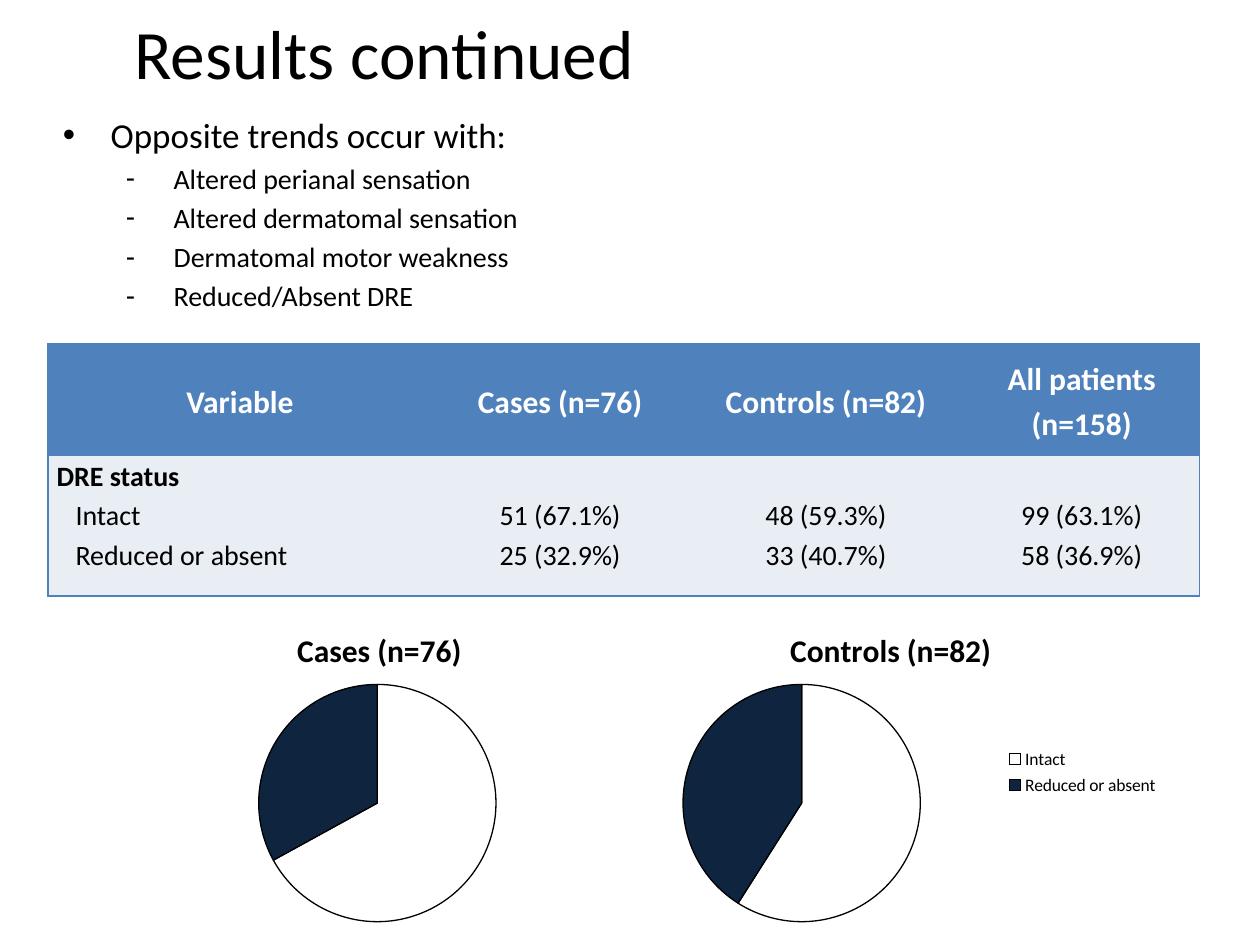
import dataclasses
import pptx
import pptx.util
import pptx.chart.data
import pptx.dml.color
import pptx.enum.chart
import pptx.enum.text
import pptx.oxml
import pptx.oxml.ns

Inches = pptx.util.Inches
Pt = pptx.util.Pt
Align = pptx.enum.text.PP_ALIGN
Anchor = pptx.enum.text.MSO_ANCHOR


@dataclasses.dataclass(frozen=True)
class Theme:
    """Colours, font and type sizes of the slide."""
    font: str = "Calibri"
    ink: str = "000000"
    white: str = "FFFFFF"
    blue: str = "4F81BD"
    pale: str = "E9EDF4"
    navy: str = "0F243E"
    title: float = 39.6
    lead: float = 20
    head: float = 18
    body: float = 16
    small: float = 10


THEME = Theme()


def rgb(code):
    """Turn a hex code into a colour."""
    return pptx.dml.color.RGBColor.from_string(code)


def node(tag, **attrs):
    """Make an XML element with the given attributes."""
    item = pptx.oxml.parse_xml(f"<{tag} {pptx.oxml.ns.nsdecls(tag.split(':')[0])}/>")
    for key, value in attrs.items():
        item.set(key, str(value))
    return item


def style(font, size, color=THEME.ink, bold=False):
    """Set the look of a font."""
    font.name, font.size, font.bold = THEME.font, Pt(size), bold
    font.color.rgb = rgb(color)


def write(para, text, size, color=THEME.ink, bold=False):
    """Add one styled run to a paragraph."""
    run = para.add_run()
    run.text = text
    style(run.font, size, color, bold)


def lines(frame, count):
    """Yield the first paragraph of a frame, then new ones."""
    yield frame.paragraphs[0]
    for _ in range(count - 1):
        yield frame.add_paragraph()


def add_title(slide, box, text):
    """Place the slide title in the box."""
    frame = slide.shapes.add_textbox(*box).text_frame
    frame.word_wrap = True
    frame.vertical_anchor = Anchor.MIDDLE
    frame.paragraphs[0].alignment = Align.CENTER
    write(frame.paragraphs[0], text, THEME.title)


def add_list(slide, box, lead, items):
    """Place a lead bullet with dashed items below it."""
    frame = slide.shapes.add_textbox(*box).text_frame
    frame.word_wrap = True
    texts = [lead, *items]
    for index, para in enumerate(lines(frame, len(texts))):
        first = index == 0
        size = THEME.lead if first else THEME.body
        para.level = 0 if first else 1
        para.space_before = Pt(size * 0.2)
        if first:
            para.line_spacing = 2.0
        props = para._p.get_or_add_pPr()
        props.set("marL", str(Inches(0.38 if first else 0.88)))
        props.set("indent", str(Inches(-0.38)))
        props.append(node("a:buFont", typeface="Arial"))
        props.append(node("a:buChar", char="•" if first else "-"))
        write(para, texts[index], size)


def edge(cell, sides):
    """Draw blue borders on the named sides of a cell."""
    props = cell._tc.get_or_add_tcPr()
    for spot, side in enumerate(sides):
        line = node(f"a:ln{side}", w=Pt(1))
        fill = node("a:solidFill")
        fill.append(node("a:srgbClr", val=THEME.blue))
        line.append(fill)
        props.insert(spot, line)


def add_table(slide, box, widths, heights, heads, groups):
    """Place the table with a header row and one row of grouped values."""
    table = slide.shapes.add_table(2, len(widths), *box).table
    table.horz_banding = table.first_row = False
    table._tbl.tblPr[0].text = "{2D5ABB26-0587-4C30-8999-92F81FD0307C}"
    for row, height in zip(table.rows, heights):
        row.height = Inches(height)
    last = len(widths) - 1
    for col, width in enumerate(widths):
        table.columns[col].width = Inches(width)
        for row, texts in enumerate(([heads[col]], groups[col])):
            cell = table.cell(row, col)
            head, label = row == 0, row == 1 and col == 0
            cell.margin_left = cell.margin_right = Inches(0.07)
            cell.margin_top = Inches(0 if head or label else 0.31)
            cell.margin_bottom = 0
            cell.vertical_anchor = Anchor.MIDDLE if head else Anchor.TOP
            cell.fill.solid()
            cell.fill.fore_color.rgb = rgb(THEME.blue if head else THEME.pale)
            edge(cell, "L" * (col == 0) + "R" * (col == last) + "TB")
            for index, para in enumerate(lines(cell.text_frame, len(texts))):
                para.line_spacing = 1.15
                para.alignment = Align.LEFT if label else Align.CENTER
                if label and index:
                    para._p.get_or_add_pPr().set("marL", str(Inches(0.15)))
                write(para, texts[index], THEME.head if head else THEME.body,
                      THEME.white if head else THEME.ink,
                      head or (label and index == 0))


def settle(part, inner=False, **spots):
    """Give a chart part a fixed place, in fractions of the chart."""
    layout, manual = node("c:layout"), node("c:manualLayout")
    layout.append(manual)
    if inner:
        manual.append(node("c:layoutTarget", val="inner"))
    for key in "xy":
        manual.append(node(f"c:{key}Mode", val="edge"))
    for key, value in spots.items():
        manual.append(node(f"c:{key}", val=value))
    for old in part.findall(pptx.oxml.ns.qn("c:layout")):
        part.remove(old)
    tags = [pptx.oxml.ns.qn(tag) for tag in ("c:tx", "c:legendPos")]
    part.insert(sum(child.tag in tags for child in part), layout)


def add_pie(slide, box, name, cats, vals, left, start, legend=False):
    """Place a titled pie chart, with a legend on request."""
    data = pptx.chart.data.CategoryChartData()
    data.categories = cats
    data.add_series(name, vals)
    chart = slide.shapes.add_chart(
        pptx.enum.chart.XL_CHART_TYPE.PIE, *box, data).chart
    style(chart.font, THEME.small)
    chart.has_title = True
    write(chart.chart_title.text_frame.paragraphs[0], name, THEME.head, bold=True)
    settle(chart.chart_title._element, x=start, y=0.07)
    plot = chart.plots[0]
    plot.vary_by_categories = True
    for index, color in enumerate((THEME.white, THEME.navy)):
        form = plot.series[0].points[index].format
        form.fill.solid()
        form.fill.fore_color.rgb = rgb(color)
        form.line.color.rgb = rgb(THEME.ink)
        form.line.width = Pt(0.75)
    settle(chart._chartSpace.chart.plotArea, True, x=left, y=0.25, w=0.42, h=0.69)
    chart.has_legend = legend
    if legend:
        chart.legend.position = pptx.enum.chart.XL_LEGEND_POSITION.RIGHT
        chart.legend.include_in_layout = False
        settle(chart.legend._element, x=0.69, y=0.42, w=0.3, h=0.17)


def main():
    """Build the results slide and save it."""
    deck = pptx.Presentation()
    deck.slide_width, deck.slide_height = Inches(10), Inches(7.5)
    slide = deck.slides.add_slide(deck.slide_layouts[6])
    box = lambda *sizes: [Inches(size) for size in sizes]
    cases, controls = "Cases (n=76)", "Controls (n=82)"
    cats = ["Intact", "Reduced or absent"]
    add_table(slide, box(0.38, 2.73, 9.15, 2), (3.05, 2.03, 2.19, 1.87), (0.88, 1.12),
              ("Variable", cases, controls, "All patients (n=158)"),
              (["DRE status", *cats], ["51 (67.1%)", "25 (32.9%)"],
               ["48 (59.3%)", "33 (40.7%)"], ["99 (63.1%)", "58 (36.9%)"]))
    add_title(slide, box(-0.95, 0.01, 8, 0.8), "Results continued")
    add_list(slide, box(0.4, 0.52, 9.46, 3.19), "Opposite trends occur with:",
             ("Altered perianal sensation", "Altered dermatomal sensation",
              "Dermatomal motor weakness", "Reduced/Absent DRE"))
    add_pie(slide, box(0.72, 4.75, 4.55, 2.73), cases, cats, (67, 33), 0.29, 0.35)
    add_pie(slide, box(4.77, 4.75, 4.55, 2.73), controls, cats, (59, 41), 0.14, 0.32, True)
    deck.save("out.pptx")


if __name__ == "__main__":
    main()
